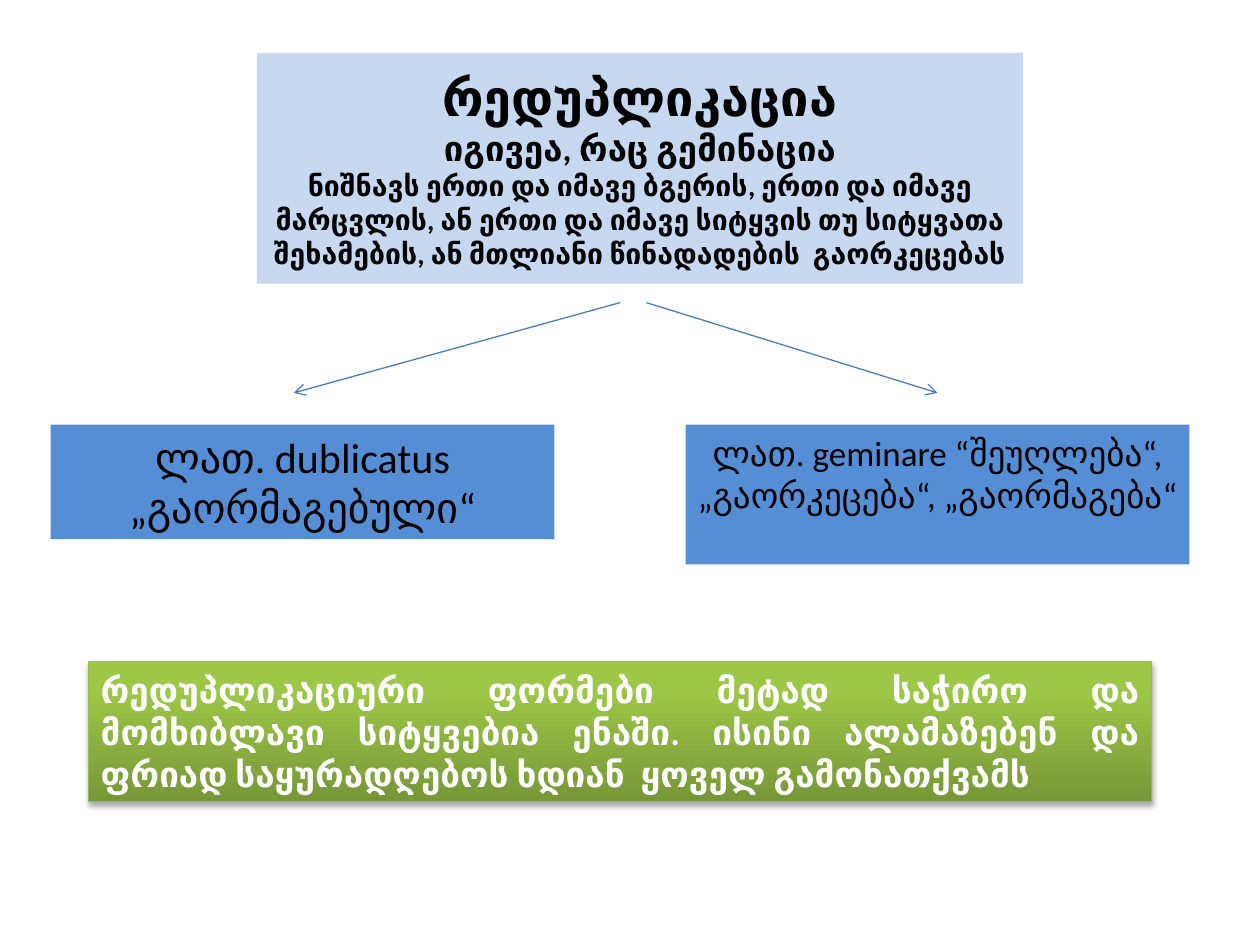
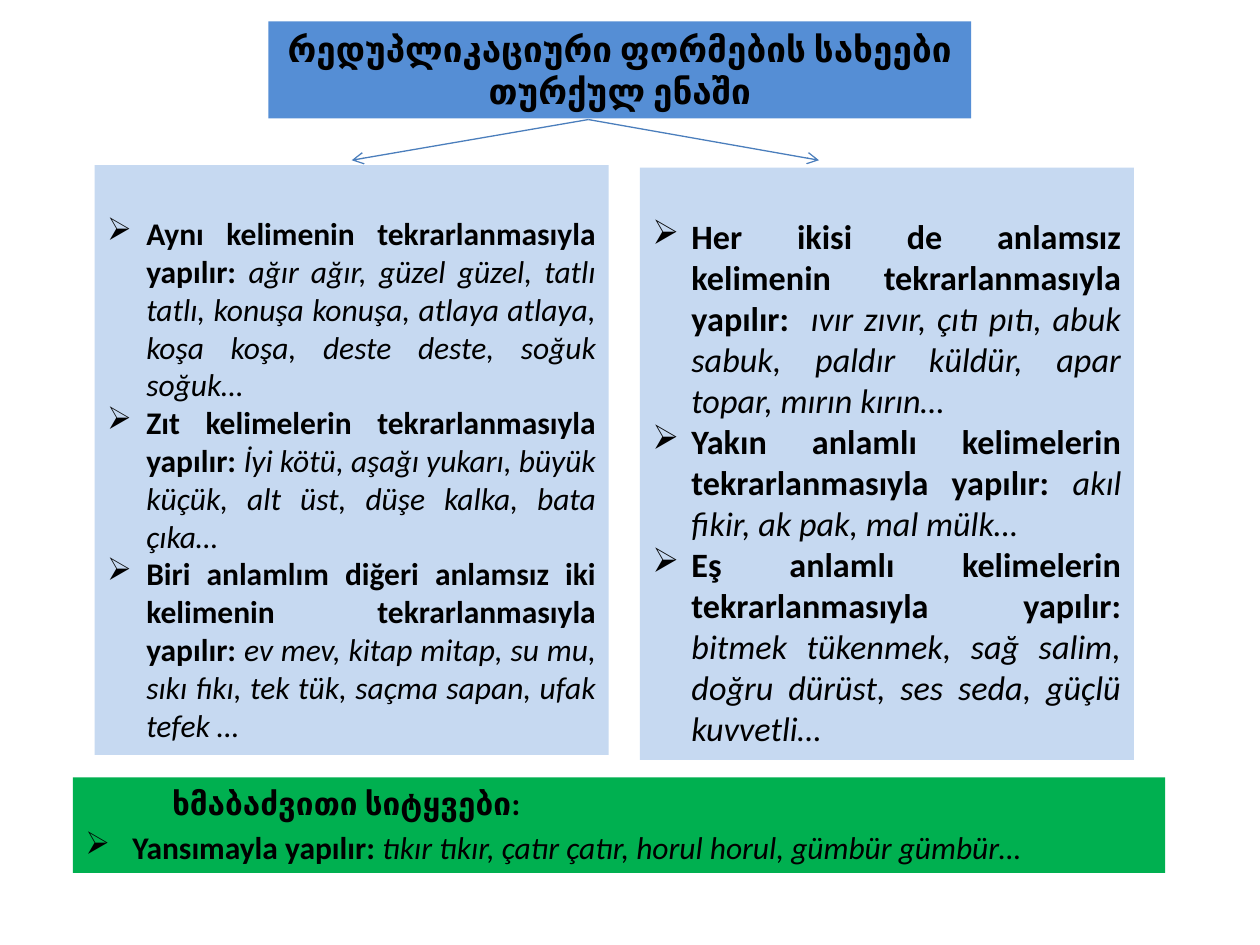
from lxml import etree
from pptx import Presentation
from pptx.dml.color import RGBColor
from pptx.enum import shapes, text
from pptx.oxml import ns
from pptx.util import Cm, Pt

# Shared style
FONT = "Calibri"
BLACK = RGBColor(0x00, 0x00, 0x00)
WHITE = RGBColor(0xFF, 0xFF, 0xFF)
PALE_BLUE = RGBColor(0xC6, 0xD9, 0xF1)
MID_BLUE = RGBColor(0x55, 0x8E, 0xD5)
ARROW_BLUE = RGBColor(0x4B, 0x7E, 0xBC)
GREEN = RGBColor(0x00, 0xB0, 0x50)
OLIVE_DARK = RGBColor(0x77, 0x97, 0x37)
OLIVE_LIGHT = RGBColor(0x9D, 0xC7, 0x46)
OLIVE_LINE = RGBColor(0x98, 0xB9, 0x55)
CENTER = text.PP_ALIGN.CENTER
JUSTIFY = text.PP_ALIGN.JUSTIFY
BULLET = "➢"

# Slide 1: the term, its two Latin roots and a conclusion
# Places are left, top, width, height in centimetres
TERM_PLACE = (5.18, 1.07, 15.44, 4.65)
TERM_LINES = [
    ("რედუპლიკაცია", 28.8),
    ("იგივეა, რაც გემინაცია", 19.8),
    ("ნიშნავს ერთი და იმავე ბგერის, ერთი და იმავე მარცვლის, ან ერთი და იმავე "
     "სიტყვის თუ სიტყვათა შეხამების, ან მთლიანი წინადადების  გაორკეცებას", 16.2),
]
LATIN_ROOTS = [
    ((1.02, 8.56, 10.16, 2.31), 24, "ლათ. dublicatus „გაორმაგებული“"),
    ((13.82, 8.56, 10.16, 2.82), 20,
     "ლათ. geminare “შეუღლება“, „გაორკეცება“, „გაორმაგება“"),
]
CONCLUSION_PLACE = (1.78, 13.34, 21.44, 2.82)
CONCLUSION = ("რედუპლიკაციური ფორმები მეტად საჭირო და მომხიბლავი სიტყვებია ენაში. "
              "ისინი ალამაზებენ და ფრიად საყურადღებოს ხდიან  ყოველ გამონათქვამს")
# Arrows are start and end points
ROOT_ARROWS = [((12.5, 6.1), (5.92, 7.92)), ((13.03, 6.1), (18.9, 7.92))]

# Slide 2: kinds of reduplication as (rule, examples)
KINDS_PLACE = (5.41, 0.43, 14.17, 1.96)
KINDS_TITLE = "რედუპლიკაციური ფორმების სახეები თურქულ ენაში"
KIND_CARDS = [
    {"place": (1.91, 3.33, 10.36, 11.89), "size": 18, "top_inset": 0.99, "kinds": [
        ("Aynı kelimenin tekrarlanmasıyla yapılır: ",
         "ağır ağır, güzel güzel, tatlı tatlı, konuşa konuşa, atlaya atlaya, "
         "koşa koşa, deste deste, soğuk soğuk…"),
        ("Zıt kelimelerin tekrarlanmasıyla yapılır: ",
         "İyi kötü, aşağı yukarı, büyük küçük, alt üst, düşe kalka, bata çıka…"),
        ("Biri anlamlım diğeri anlamsız iki kelimenin tekrarlanmasıyla yapılır: ",
         "ev mev, kitap mitap, su mu, sıkı fıkı, tek tük, saçma sapan, ufak tefek …"),
    ]},
    {"place": (12.9, 3.38, 9.96, 11.94), "size": 19.5, "top_inset": 0.97, "kinds": [
        ("Her ikisi de anlamsız kelimenin tekrarlanmasıyla yapılır:  ",
         "ıvır zıvır, çıtı pıtı, abuk sabuk, paldır küldür, apar topar, mırın kırın…"),
        ("Yakın anlamlı kelimelerin tekrarlanmasıyla yapılır: ",
         "akıl fikir, ak pak, mal mülk…"),
        ("Eş anlamlı kelimelerin tekrarlanmasıyla yapılır: ",
         "bitmek tükenmek, sağ salim, doğru dürüst, ses seda, güçlü kuvvetli…"),
    ]},
]
SOUND_PLACE = (1.47, 15.67, 22.02, 1.93)
SOUND_HEADING = "ხმაბაძვითი სიტყვები:"
SOUND_KIND = ("Yansımayla yapılır: ",
              "tıkır tıkır, çatır çatır, horul horul, gümbür gümbür…")
KIND_ARROWS = [((11.86, 2.41), (7.09, 3.23)), ((11.86, 2.41), (16.51, 3.23))]


def add_box(slide, place, fill, top_inset=0.13, anchor=text.MSO_ANCHOR.TOP):
    """Add a rectangle without outline; a fill of None is set by the caller."""
    shape = slide.shapes.add_shape(shapes.MSO_SHAPE.RECTANGLE, *map(Cm, place))
    shape.shadow.inherit = False
    shape.line.fill.background()
    if fill is not None:
        shape.fill.solid()
        shape.fill.fore_color.rgb = fill
    frame = shape.text_frame
    frame.word_wrap = True
    frame.vertical_anchor = anchor
    frame.margin_top = Cm(top_inset)
    return shape


def add_paragraph(shape, align):
    frame = shape.text_frame
    first = frame.paragraphs[0]
    paragraph = frame.add_paragraph() if first.runs else first
    paragraph.alignment = align
    return paragraph


def add_run(paragraph, words, size, color=BLACK, bold=False, italic=False):
    run = paragraph.add_run()
    run.text = words
    font = run.font
    font.name, font.size, font.bold, font.italic = FONT, Pt(size), bold, italic
    font.color.rgb = color


def add_kind(shape, kind, size, indent):
    """Add a bulleted rule in bold, followed by its examples in italics."""
    rule, examples = kind
    paragraph = add_paragraph(shape, JUSTIFY)
    properties = paragraph._p.get_or_add_pPr()
    properties.set("marL", str(Cm(indent)))
    properties.set("indent", str(-Cm(indent)))
    etree.SubElement(properties, ns.qn("a:buChar"), char=BULLET)
    add_run(paragraph, rule, size, bold=True)
    add_run(paragraph, examples, size, italic=True)
    return paragraph


def add_arrows(slide, arrows):
    for start, end in arrows:
        connector = slide.shapes.add_connector(
            shapes.MSO_CONNECTOR.STRAIGHT, *map(Cm, start + end))
        connector.line.color.rgb = ARROW_BLUE
        connector.line.width = Pt(0.75)
        properties = connector._element.spPr
        etree.SubElement(properties.find(ns.qn("a:ln")), ns.qn("a:tailEnd"), type="arrow")
        etree.SubElement(properties, ns.qn("a:effectLst"))


def style_conclusion(shape):
    """Olive gradient, dark at the bottom, with a thin line and a soft shadow."""
    shape.fill.gradient()
    shape.fill.gradient_angle = 90
    stops = zip(shape.fill.gradient_stops, (0, 0.8), (OLIVE_DARK, OLIVE_LIGHT))
    for stop, position, color in stops:
        stop.position = position
        stop.color.rgb = color
    shape.line.color.rgb = OLIVE_LINE
    shape.line.width = Pt(0.75)
    effects = shape._element.spPr.find(ns.qn("a:effectLst"))
    shadow = etree.SubElement(
        effects, ns.qn("a:outerShdw"), blurRad=str(Pt(3.1)), dist=str(Pt(1.8)),
        dir="5400000", rotWithShape="0")
    color = etree.SubElement(shadow, ns.qn("a:srgbClr"), val=str(BLACK))
    etree.SubElement(color, ns.qn("a:alpha"), val="35000")


def build_term_slide(slide):
    # Term and definition
    term = add_box(slide, TERM_PLACE, PALE_BLUE, anchor=text.MSO_ANCHOR.MIDDLE)
    for words, size in TERM_LINES:
        add_run(add_paragraph(term, CENTER), words, size, bold=True)

    # Latin roots
    for place, size, words in LATIN_ROOTS:
        root = add_box(slide, place, MID_BLUE)
        add_run(add_paragraph(root, CENTER), words, size)
    add_arrows(slide, ROOT_ARROWS)

    # Conclusion
    conclusion = add_box(slide, CONCLUSION_PLACE, None)
    style_conclusion(conclusion)
    add_run(add_paragraph(conclusion, JUSTIFY), CONCLUSION, 20, WHITE, bold=True)


def build_kinds_slide(slide):
    # Heading
    heading = add_box(slide, KINDS_PLACE, MID_BLUE)
    add_run(add_paragraph(heading, CENTER), KINDS_TITLE, 20, bold=True)

    # Cards of kinds
    for card in KIND_CARDS:
        shape = add_box(slide, card["place"], PALE_BLUE, card["top_inset"])
        for kind in card["kinds"]:
            add_kind(shape, kind, card["size"], indent=0.79)
    add_arrows(slide, KIND_ARROWS)

    # Sound-imitating words
    sound = add_box(slide, SOUND_PLACE, GREEN)
    paragraph = add_paragraph(sound, JUSTIFY)
    paragraph._p.get_or_add_pPr().set("marL", str(Cm(1.75)))
    add_run(paragraph, SOUND_HEADING, 18, bold=True)
    add_kind(sound, SOUND_KIND, 18, indent=0.95).space_before = Pt(3.6)


def main():
    presentation = Presentation()
    presentation.slide_width, presentation.slide_height = Cm(25.4), Cm(19.05)
    blank = presentation.slide_layouts[6]
    for build in (build_term_slide, build_kinds_slide):
        build(presentation.slides.add_slide(blank))
    presentation.save("out.pptx")


if __name__ == "__main__":
    main()
